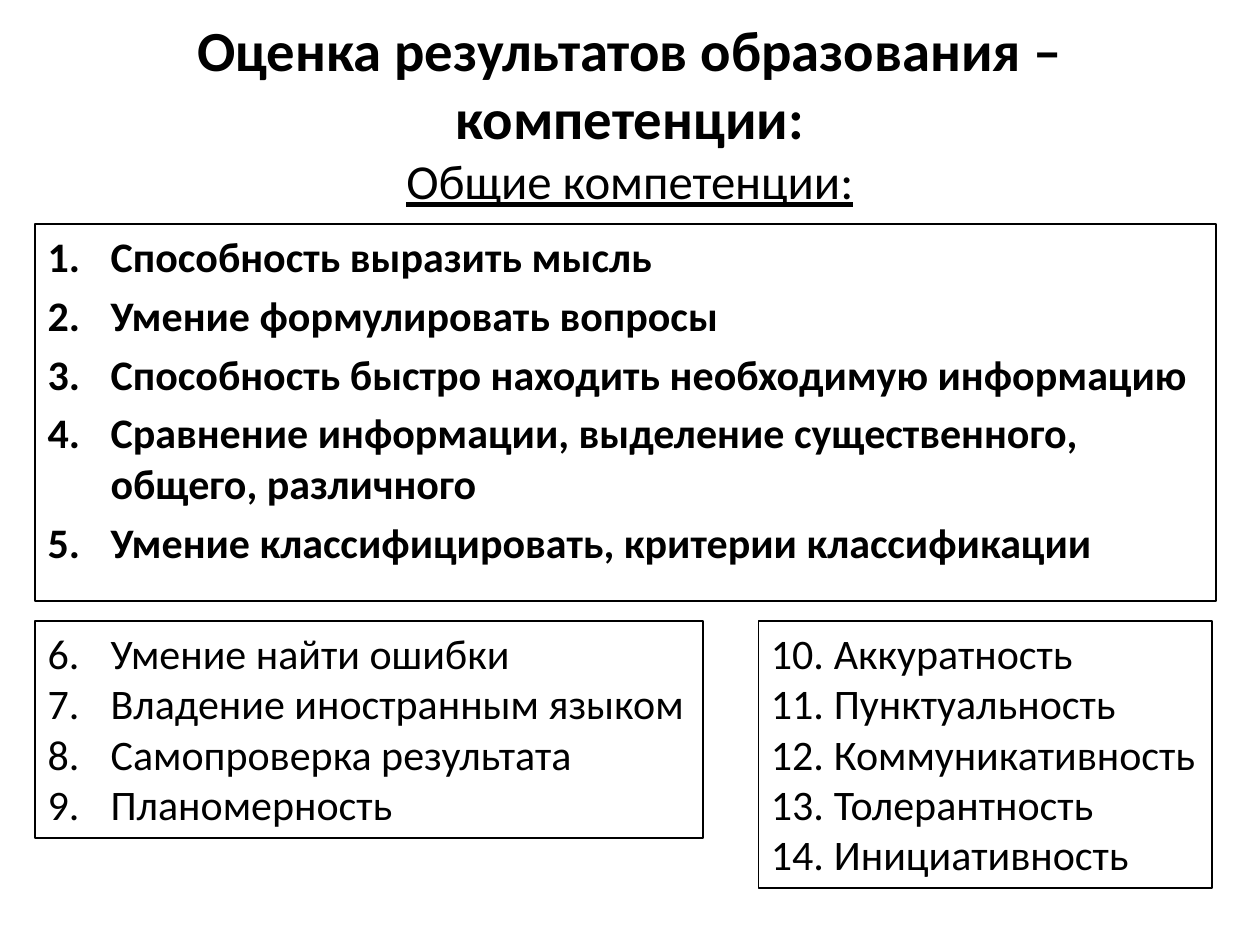
"""Build a slide listing general competencies in three numbered boxes."""
from dataclasses import dataclass

from lxml import etree
from pptx import Presentation
from pptx import util as u
from pptx.dml.color import RGBColor
from pptx.enum import text
from pptx.oxml import ns


@dataclass(frozen=True)
class Theme:
    font: str = "Calibri"
    ink: RGBColor = RGBColor(0, 0, 0)
    title: float = 32.4
    subtitle: float = 27.9
    body: float = 24
    line: float = 1
    indent: float = 36


@dataclass(frozen=True)
class NumberedBox:
    left: float
    top: float
    width: float
    height: float
    items: tuple[str, ...]
    start: int = 1
    bold: bool = False
    gap: float = 0
    wrap: bool = False


THEME = Theme()
LEFT, LOWER_TOP = 20.16, 354.96
BOXES = (
    NumberedBox(LEFT, 128.16, 674.64, 215.28, (
        "Способность выразить мысль",
        "Умение формулировать вопросы",
        "Способность быстро находить необходимую информацию",
        "Сравнение информации, выделение существенного, общего, различного",
        "Умение классифицировать, критерии классификации",
    ), bold=True, gap=4.8, wrap=True),
    NumberedBox(LEFT, LOWER_TOP, 381.6, 123.84, (
        "Умение найти ошибки",
        "Владение иностранным языком",
        "Самопроверка результата",
        "Планомерность",
    ), start=6),
    NumberedBox(433.44, LOWER_TOP, 259.2, 152.64, (
        "Аккуратность",
        "Пунктуальность",
        "Коммуникативность",
        "Толерантность",
        "Инициативность",
    ), start=10),
)


def apply(target, values: dict) -> None:
    for name, value in values.items():
        setattr(target, name, value)


def add_run(p, content: str, size: float, **extra) -> None:
    r = p.add_run()
    r.text = content
    apply(r.font, {"name": THEME.font, "size": u.Pt(size), **extra})
    r.font.color.rgb = THEME.ink


def number(p, start: int) -> None:
    pPr = p._p.get_or_add_pPr()
    indent = u.Pt(THEME.indent)
    pPr.set("marL", str(indent))
    pPr.set("indent", str(-indent))
    etree.SubElement(pPr, ns.qn("a:buFont"), typeface=THEME.font)
    etree.SubElement(pPr, ns.qn("a:buAutoNum"), type="arabicPeriod", startAt=str(start))


def add_title(s) -> None:
    tf = s.shapes.add_textbox(u.Pt(36), u.Pt(0), u.Pt(648), u.Pt(128.16)).text_frame
    apply(tf, {"word_wrap": True, "vertical_anchor": text.MSO_ANCHOR.MIDDLE})
    p = tf.paragraphs[0]
    p.alignment = text.PP_ALIGN.CENTER
    add_run(p, "Оценка результатов образования – компетенции:", THEME.title, bold=True)
    p.add_line_break()
    add_run(p, "Общие компетенции:", THEME.subtitle, bold=False, underline=True)


def add_box(s, box: NumberedBox) -> None:
    frame = (u.Pt(v) for v in (box.left, box.top, box.width, box.height))
    sp = s.shapes.add_textbox(*frame)
    sp.line.color.rgb = THEME.ink
    sp.line.width = u.Pt(THEME.line)
    fit = text.MSO_AUTO_SIZE.NONE if box.wrap else text.MSO_AUTO_SIZE.SHAPE_TO_FIT_TEXT
    tf = sp.text_frame
    apply(tf, {"word_wrap": box.wrap, "auto_size": fit})
    for i, item in enumerate(box.items):
        p = tf.add_paragraph() if i else tf.paragraphs[0]
        p.space_before = u.Pt(box.gap)
        number(p, box.start)
        add_run(p, item, THEME.body, bold=box.bold)


def main() -> None:
    prs = Presentation()
    apply(prs, {"slide_width": u.Pt(720), "slide_height": u.Pt(540)})
    s = prs.slides.add_slide(prs.slide_layouts[6])
    add_title(s)
    for box in BOXES:
        add_box(s, box)
    prs.save("out.pptx")


if __name__ == "__main__":
    main()
